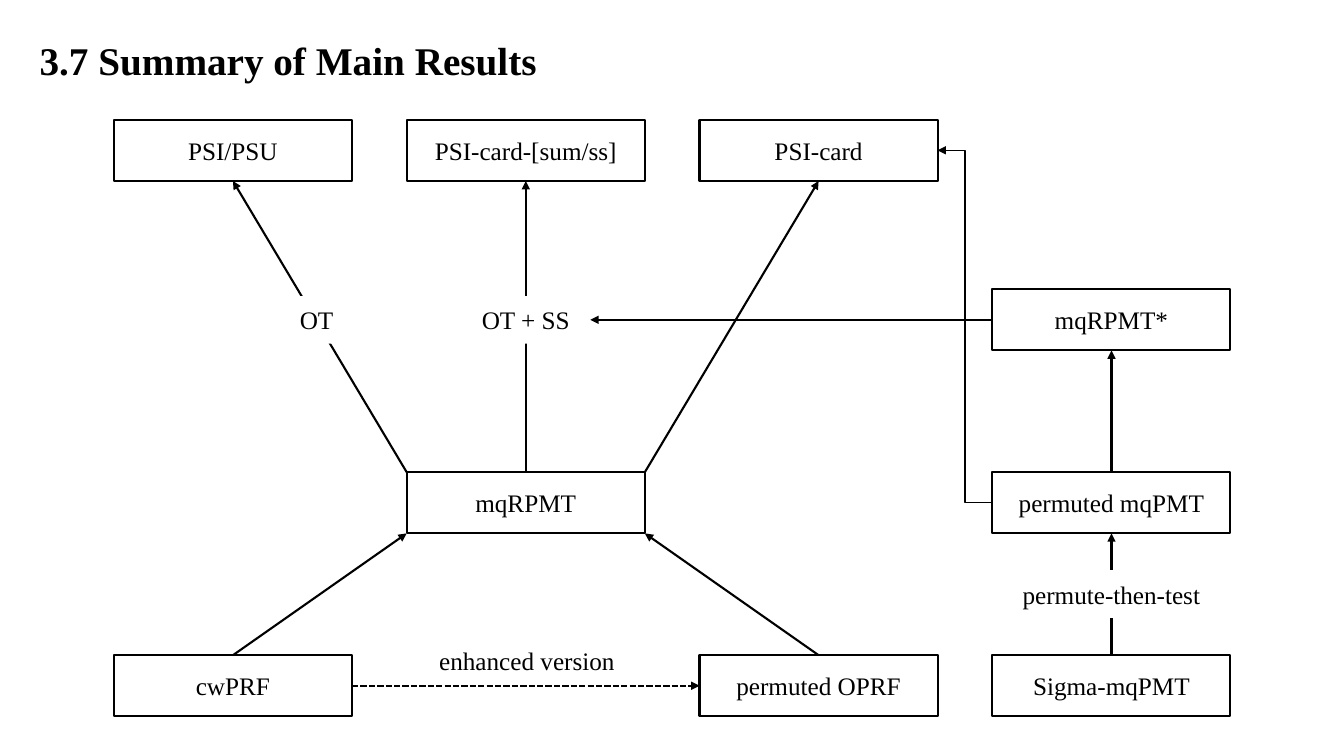
from dataclasses import dataclass
from typing import Optional

from lxml.etree import SubElement
from pptx import Presentation
from pptx.dml.color import RGBColor
from pptx.enum.dml import MSO_LINE
from pptx.enum.shapes import MSO_CONNECTOR as Connector, MSO_SHAPE as Preset
from pptx.enum.text import MSO_ANCHOR as Anchor, PP_ALIGN as Align
from pptx.oxml.ns import qn
from pptx.slide import Slide
from pptx.text.text import TextFrame
from pptx.util import Cm, Pt

Point = tuple[float, float]


@dataclass(frozen=True)
class Theme:
    ink: RGBColor = RGBColor(0, 0, 0)
    paper: RGBColor = RGBColor(255, 255, 255)
    font: str = "Times New Roman"
    title_size: float = 28
    body_size: float = 18
    line: float = 1.5
    thin_line: float = 1


THEME = Theme()
BOX_WIDTH, BOX_HEIGHT = 6.0, 1.54
LABEL_HEIGHT = 1.2
FIRST_COLUMN, COLUMN_STEP = 2.87, 7.38
ROW_TOPS = (3.02, 7.29, 11.9, 16.51)


@dataclass(frozen=True)
class Box:
    text: str
    column: int
    row: int

    def at(self, across: float, down: float) -> Point:
        left = FIRST_COLUMN + self.column * COLUMN_STEP
        return left + across * BOX_WIDTH, ROW_TOPS[self.row] + down * BOX_HEIGHT

    @property
    def top(self) -> Point:
        return self.at(0.5, 0)

    @property
    def bottom(self) -> Point:
        return self.at(0.5, 1)

    @property
    def left(self) -> Point:
        return self.at(0, 0.5)

    @property
    def right(self) -> Point:
        return self.at(1, 0.5)


@dataclass(frozen=True)
class Arrow:
    start: Point
    end: Point
    kind: Connector = Connector.STRAIGHT
    width: float = THEME.line
    dash: Optional[MSO_LINE] = None


@dataclass(frozen=True)
class Label:
    text: str
    center: Point
    width: float
    filled: bool = True


PSI = Box("PSI/PSU", 0, 0)
CARD_SUM = Box("PSI-card-[sum/ss]", 1, 0)
CARD = Box("PSI-card", 2, 0)
MQRPMT_STAR = Box("mqRPMT*", 3, 1)
MQRPMT = Box("mqRPMT", 1, 2)
PERMUTED_PMT = Box("permuted mqPMT", 3, 2)
CWPRF = Box("cwPRF", 0, 3)
PERMUTED_OPRF = Box("permuted OPRF", 2, 3)
SIGMA = Box("Sigma-mqPMT", 3, 3)
BOXES = (PSI, CARD_SUM, CARD, MQRPMT_STAR, MQRPMT, PERMUTED_PMT,
         CWPRF, PERMUTED_OPRF, SIGMA)

OT_SS = Label("OT + SS", (MQRPMT.top[0], MQRPMT_STAR.left[1]), 3.25)
LABELS = (
    Label("OT", (7.98, MQRPMT_STAR.left[1]), 3.25),
    OT_SS,
    Label("permute-then-test", (SIGMA.top[0], 14.97), 5.13),
    Label("enhanced version", (13.28, 16.65), 8.74, filled=False),
)
ARROWS = (
    Arrow(SIGMA.top, PERMUTED_PMT.bottom),
    Arrow(PERMUTED_PMT.top, MQRPMT_STAR.bottom),
    Arrow(PERMUTED_OPRF.top, MQRPMT.at(1, 1)),
    Arrow(CWPRF.top, MQRPMT.at(0, 1)),
    Arrow(MQRPMT.at(1, 0), CARD.bottom),
    Arrow(MQRPMT.at(0, 0), PSI.bottom),
    Arrow(MQRPMT.top, CARD_SUM.bottom),
    Arrow(CWPRF.right, PERMUTED_OPRF.left, dash=MSO_LINE.SQUARE_DOT),
    Arrow(MQRPMT_STAR.left, (OT_SS.center[0] + OT_SS.width / 2, OT_SS.center[1])),
    Arrow(PERMUTED_PMT.left, CARD.right, Connector.ELBOW, THEME.thin_line),
)


def write(frame: TextFrame, text: str, size: float,
          align: Align = Align.CENTER, bold: bool = False) -> None:
    frame.word_wrap = True
    frame.vertical_anchor = Anchor.MIDDLE
    paragraph = frame.paragraphs[0]
    paragraph.alignment = align
    run = paragraph.add_run()
    run.text = text
    run.font.name = THEME.font
    run.font.size = Pt(size)
    run.font.bold = bold
    run.font.color.rgb = THEME.ink


def draw_title(slide: Slide, text: str) -> None:
    shape = slide.shapes.add_textbox(0, 0, Cm(22.35), Cm(3.02))
    shape.text_frame.margin_left = shape.text_frame.margin_right = Cm(1)
    write(shape.text_frame, text, THEME.title_size, Align.LEFT, bold=True)


def draw_box(slide: Slide, box: Box) -> None:
    left, top = box.at(0, 0)
    shape = slide.shapes.add_shape(
        Preset.RECTANGLE, Cm(left), Cm(top), Cm(BOX_WIDTH), Cm(BOX_HEIGHT))
    shape.shadow.inherit = False
    shape.fill.background()
    shape.line.color.rgb = THEME.ink
    shape.line.width = Pt(THEME.line)
    write(shape.text_frame, box.text, THEME.body_size)


def draw_label(slide: Slide, label: Label) -> None:
    x, y = label.center
    shape = slide.shapes.add_textbox(
        Cm(x - label.width / 2), Cm(y - LABEL_HEIGHT / 2),
        Cm(label.width), Cm(LABEL_HEIGHT))
    if label.filled:
        shape.fill.solid()
        shape.fill.fore_color.rgb = THEME.paper
    write(shape.text_frame, label.text, THEME.body_size)


def draw_arrow(slide: Slide, arrow: Arrow) -> None:
    connector = slide.shapes.add_connector(
        arrow.kind, *(Cm(value) for value in arrow.start + arrow.end))
    connector.line.color.rgb = THEME.ink
    connector.line.width = Pt(arrow.width)
    if arrow.dash is not None:
        connector.line.dash_style = arrow.dash
    properties = connector._element.spPr
    SubElement(properties.find(qn("a:ln")), qn("a:tailEnd"), type="triangle")
    SubElement(properties, qn("a:effectLst"))


def main() -> None:
    presentation = Presentation()
    presentation.slide_width, presentation.slide_height = Cm(33.87), Cm(19.05)
    slide = presentation.slides.add_slide(presentation.slide_layouts[6])
    draw_title(slide, "3.7 Summary of Main Results")
    for box in BOXES:
        draw_box(slide, box)
    for arrow in ARROWS:
        draw_arrow(slide, arrow)
    for label in LABELS:
        draw_label(slide, label)
    presentation.save("out.pptx")


if __name__ == "__main__":
    main()
